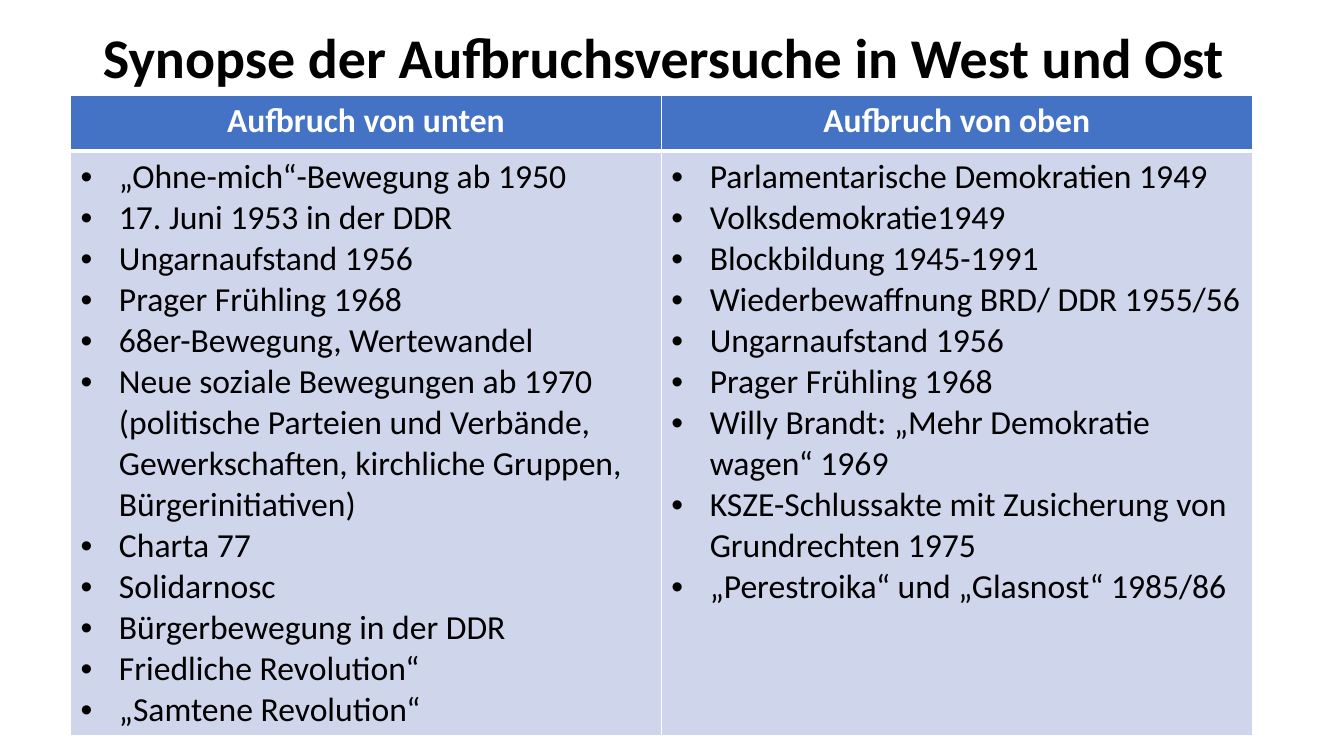
from lxml import etree
from pptx import Presentation
from pptx import util as u
from pptx.dml.color import RGBColor
from pptx.enum import text
from pptx.oxml import ns

WIDTH, HEIGHT = u.Inches(13.33), u.Inches(7.5)
FONT = "Calibri"
BLACK = RGBColor(0x00, 0x00, 0x00)
WHITE = RGBColor(0xFF, 0xFF, 0xFF)
HEADER_BLUE = RGBColor(0x44, 0x72, 0xC4)
BODY_BLUE = RGBColor(0xCF, 0xD5, 0xEA)
THIN, THICK = u.Pt(1), u.Pt(3)
BULLET_INDENT = u.Inches(0.38)

SYNOPSIS = {
    "Aufbruch von unten": [
        "„Ohne-mich“-Bewegung ab 1950",
        "17. Juni 1953 in der DDR",
        "Ungarnaufstand 1956",
        "Prager Frühling 1968",
        "68er-Bewegung, Wertewandel",
        "Neue soziale Bewegungen ab 1970 (politische Parteien und Verbände, "
        "Gewerkschaften, kirchliche Gruppen, Bürgerinitiativen)",
        "Charta 77",
        "Solidarnosc",
        "Bürgerbewegung in der DDR",
        "Friedliche Revolution“",
        "„Samtene Revolution“",
    ],
    "Aufbruch von oben": [
        "Parlamentarische Demokratien 1949",
        "Volksdemokratie1949",
        "Blockbildung 1945-1991",
        "Wiederbewaffnung BRD/ DDR 1955/56",
        "Ungarnaufstand 1956",
        "Prager Frühling 1968",
        "Willy Brandt: „Mehr Demokratie wagen“ 1969",
        "KSZE-Schlussakte mit Zusicherung von Grundrechten 1975",
        "„Perestroika“ und „Glasnost“ 1985/86",
    ],
}


def style_font(paragraph, size, color, bold):
    font = paragraph.font
    font.name, font.size, font.bold = FONT, u.Pt(size), bold
    font.color.rgb = color


def add_bullet(paragraph):
    properties = paragraph._p.get_or_add_pPr()
    properties.set("marL", str(BULLET_INDENT))
    properties.set("indent", str(-BULLET_INDENT))
    bullet_font = etree.Element(ns.qn("a:buFont"), typeface="Arial")
    bullet = etree.Element(ns.qn("a:buChar"), char="•")
    properties.insert(0, bullet_font)
    properties.insert(1, bullet)


def set_borders(cell, top, bottom):
    """Draw white borders; they precede the fill in the cell properties."""
    properties = cell._tc.get_or_add_tcPr()
    sides = {"lnL": THIN, "lnR": THIN, "lnT": top, "lnB": bottom}
    for position, (side, width) in enumerate(sides.items()):
        line = etree.Element(ns.qn(f"a:{side}"), w=str(width))
        fill = etree.SubElement(line, ns.qn("a:solidFill"))
        etree.SubElement(fill, ns.qn("a:srgbClr"), val=str(WHITE))
        properties.insert(position, line)


def fill_cell(cell, lines, fill, color, header):
    cell.fill.solid()
    cell.fill.fore_color.rgb = fill
    set_borders(cell, THIN if header else THICK, THICK if header else THIN)
    cell.text_frame.text = "\n".join(lines)
    for paragraph in cell.text_frame.paragraphs:
        style_font(paragraph, 24, color, header)
        if header:
            paragraph.alignment = text.PP_ALIGN.CENTER
        else:
            add_bullet(paragraph)


def set_title(slide, wording):
    title = slide.shapes.title
    title.left, title.top = u.Inches(0.92), 0
    title.width, title.height = u.Inches(11.5), int(HEIGHT * 0.16)
    frame = title.text_frame
    frame.text = wording
    frame.word_wrap = True
    frame.auto_size = text.MSO_AUTO_SIZE.NONE
    frame.vertical_anchor = text.MSO_ANCHOR.MIDDLE
    heading = frame.paragraphs[0]
    heading.alignment = text.PP_ALIGN.LEFT
    heading.line_spacing = 0.9
    style_font(heading, 40, BLACK, True)


def add_synopsis(slide, synopsis):
    header_height, body_height = u.Inches(0.55), u.Inches(5.32)
    table = slide.shapes.add_table(
        2, len(synopsis), u.Inches(0.7), u.Inches(0.95),
        u.Inches(5.86) * len(synopsis), header_height + body_height).table
    table.rows[0].height, table.rows[1].height = header_height, body_height
    for column, (heading, events) in enumerate(synopsis.items()):
        fill_cell(table.cell(0, column), [heading], HEADER_BLUE, WHITE, True)
        fill_cell(table.cell(1, column), events, BODY_BLUE, BLACK, False)


def main():
    deck = Presentation()
    deck.slide_width, deck.slide_height = WIDTH, HEIGHT
    slide = deck.slides.add_slide(deck.slide_layouts.get_by_name("Title Only"))

    # Heading
    set_title(slide, "Synopse der Aufbruchsversuche in West und Ost")

    # Comparison of movements from below and from above
    add_synopsis(slide, SYNOPSIS)

    deck.save("out.pptx")


if __name__ == "__main__":
    main()
